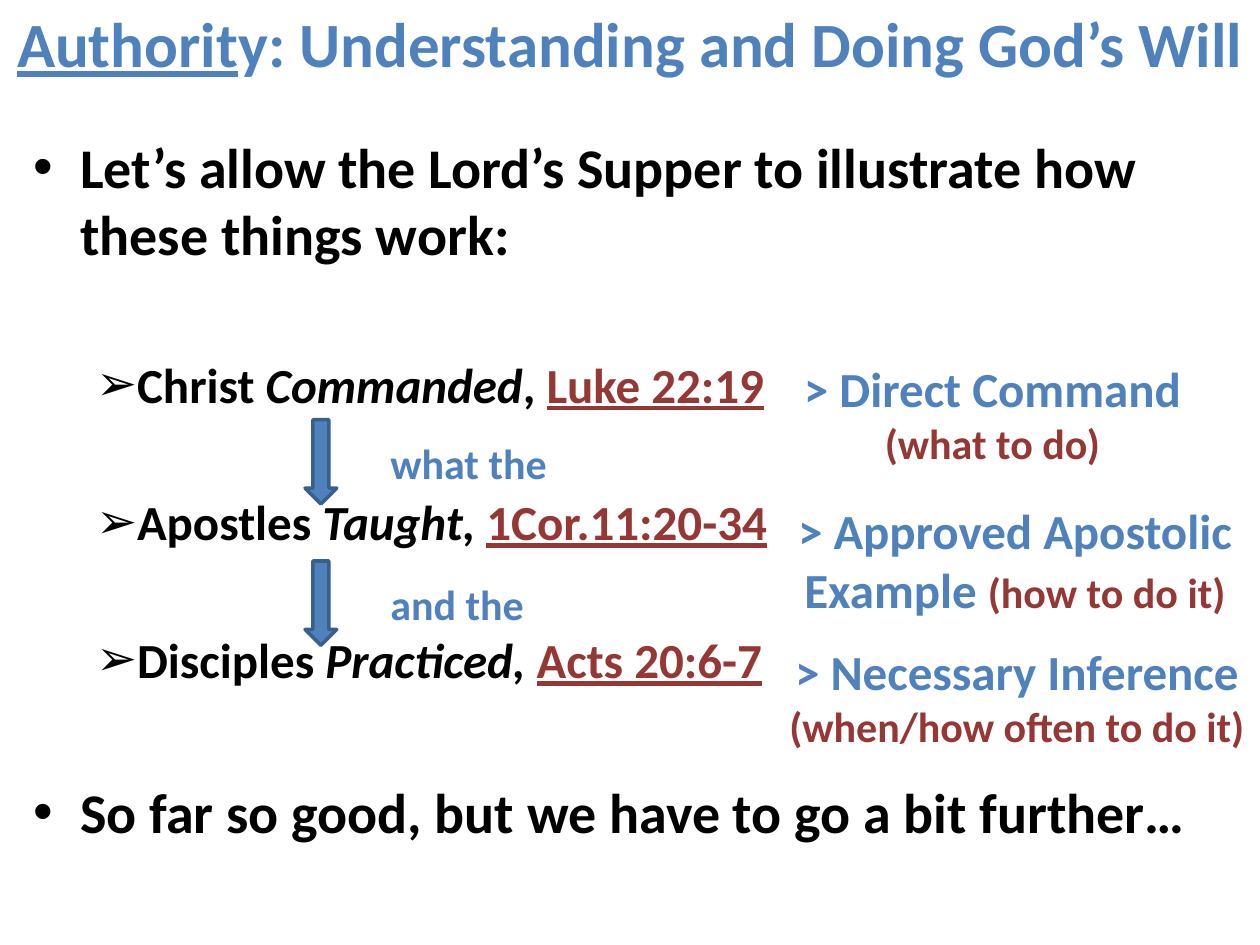
from dataclasses import dataclass

from lxml.etree import SubElement
from pptx import Presentation
from pptx.dml.color import RGBColor as RGB
from pptx.enum.shapes import MSO_SHAPE as Shape
from pptx.enum.text import MSO_ANCHOR as Anchor, MSO_AUTO_SIZE as Auto, PP_ALIGN as Align
from pptx.oxml.ns import qn
from pptx.util import Cm, Pt


@dataclass(frozen=True)
class Theme:
    font: str = "Calibri"
    bullet_font: str = "Arial"
    blue: RGB = RGB(0x4F, 0x81, 0xBD)
    edge: RGB = RGB(0x3A, 0x5F, 0x8C)
    red: RGB = RGB(0x95, 0x37, 0x35)
    black: RGB = RGB(0, 0, 0)
    title: int = 36
    lead: int = 32
    step: int = 28
    note: int = 24


T = Theme()

# Run styles
HEAD = dict(size=T.title, color=T.blue)
LEAD = dict(size=T.lead, color=T.black)
STEP = dict(size=T.step, color=T.black)
VERSE = dict(size=T.step, color=T.red, underline=True)
LABEL = dict(size=T.step, color=T.blue)
LINK = dict(size=T.note, color=T.blue)
ASIDE = dict(size=T.note, color=T.red)

# Content: a paragraph is a list of (text, style) runs
TITLE = [("Authorit", HEAD | dict(underline=True)),
         ("y: Understanding and Doing God’s Will", HEAD)]
OPENING = "Let’s allow the Lord’s Supper to illustrate how these things work:"
CLOSING = "So far so good, but we have to go a bit further…"
STEPS = [  # who, did what, separator, verse
    ("Christ ", "Commanded", ", ", "Luke 22:19"),
    ("Apostles ", "Taught, ", "", "1Cor.11:20-34"),
    ("Disciples ", "Practiced, ", "", "Acts 20:6-7"),
]
LINKS = [("what the", 5.72), ("and the", 4.88)]  # text, width
LABELS = [  # left, width, height, paragraphs
    (15.75, 8.51, 2.49, [[("> Direct Command ", LABEL), ("(what to do)", ASIDE)]]),
    (15.67, 9.58, 2.64, [[("> Approved Apostolic Example ", LABEL),
                          ("(how to do it)", ASIDE)]]),
    (15.52, 9.96, 2.49, [[("> Necessary Inference", LABEL)],
                         [("(when/how often to do it)", ASIDE)]]),
]

# Vertical rhythm and bullet levels: character, margin, indent
ROW = 2.85
LABEL_TOP, ARROW_TOP, LINK_TOP = 7.11, 8.46, 8.69
DOT = ("•", 0.95, -0.95)
POINTER = ("➢", 2.06, -0.79)


def add_runs(p, runs):
    for text, style in runs:
        r = p.add_run()
        r.text = text
        fmt = dict(name=T.font, bold=True) | style
        r.font.color.rgb = fmt.pop("color")
        fmt["size"] = Pt(fmt["size"])
        for key, value in fmt.items():
            setattr(r.font, key, value)


def add_text(slide, box, paragraphs, align=Align.LEFT, **frame):
    tf = slide.shapes.add_textbox(*map(Cm, box)).text_frame
    for key, value in (dict(word_wrap=True) | frame).items():
        setattr(tf, key, value)
    for i, runs in enumerate(paragraphs):
        p = tf.add_paragraph() if i else tf.paragraphs[0]
        p.alignment = align
        add_runs(p, runs)
    return tf


def set_bullet(p, char, margin, indent):
    pPr = p._p.get_or_add_pPr()
    pPr.set("marL", str(Cm(margin)))
    pPr.set("indent", str(Cm(indent)))
    SubElement(pPr, qn("a:buFont")).set("typeface", T.bullet_font)
    SubElement(pPr, qn("a:buChar")).set("char", char)


def add_arrow(slide, top):
    sp = slide.shapes.add_shape(Shape.DOWN_ARROW, *map(Cm, (6.15, top, 0.64, 1.7)))
    sp.shadow.inherit = False
    sp.fill.solid()
    sp.fill.fore_color.rgb = T.blue
    sp.line.color.rgb = T.edge
    sp.line.width = Pt(2)


def main():
    prs = Presentation()
    prs.slide_width, prs.slide_height = Cm(25.4), Cm(19.05)
    slide = prs.slides.add_slide(prs.slide_layouts[6])

    # Title
    add_text(slide, (0, 0, 25.4, 1.7), [TITLE], Align.CENTER,
             vertical_anchor=Anchor.MIDDLE)

    # Outline: opening, three steps, closing
    steps = [[(who, STEP), (did, STEP | dict(italic=True)), (sep, STEP), (verse, VERSE)]
             for who, did, sep, verse in STEPS]
    steps = [[run for run in runs if run[0]] for runs in steps]
    tf = add_text(slide, (0.42, 2.54, 24.56, 16.09),
                  [[(OPENING, LEAD)], *steps, [(CLOSING, LEAD)]])
    bullets = [DOT] + [POINTER] * len(steps) + [DOT]
    for p, bullet, gap in zip(tf.paragraphs, bullets, (6, 50, 45, 45, 51)):
        p.space_before = Pt(gap)
        set_bullet(p, *bullet)

    # Arrows and linking words between the steps
    for i, (text, width) in enumerate(LINKS):
        add_arrow(slide, ARROW_TOP + i * ROW)
        add_text(slide, (7.62, LINK_TOP + i * ROW, width, 1.27), [[(text, LINK)]],
                 auto_size=Auto.SHAPE_TO_FIT_TEXT)

    # Labels to the right of the steps
    for i, (left, width, height, paragraphs) in enumerate(LABELS):
        add_text(slide, (left, LABEL_TOP + i * ROW, width, height), paragraphs,
                 Align.CENTER, auto_size=Auto.SHAPE_TO_FIT_TEXT)

    prs.save("out.pptx")


if __name__ == "__main__":
    main()
